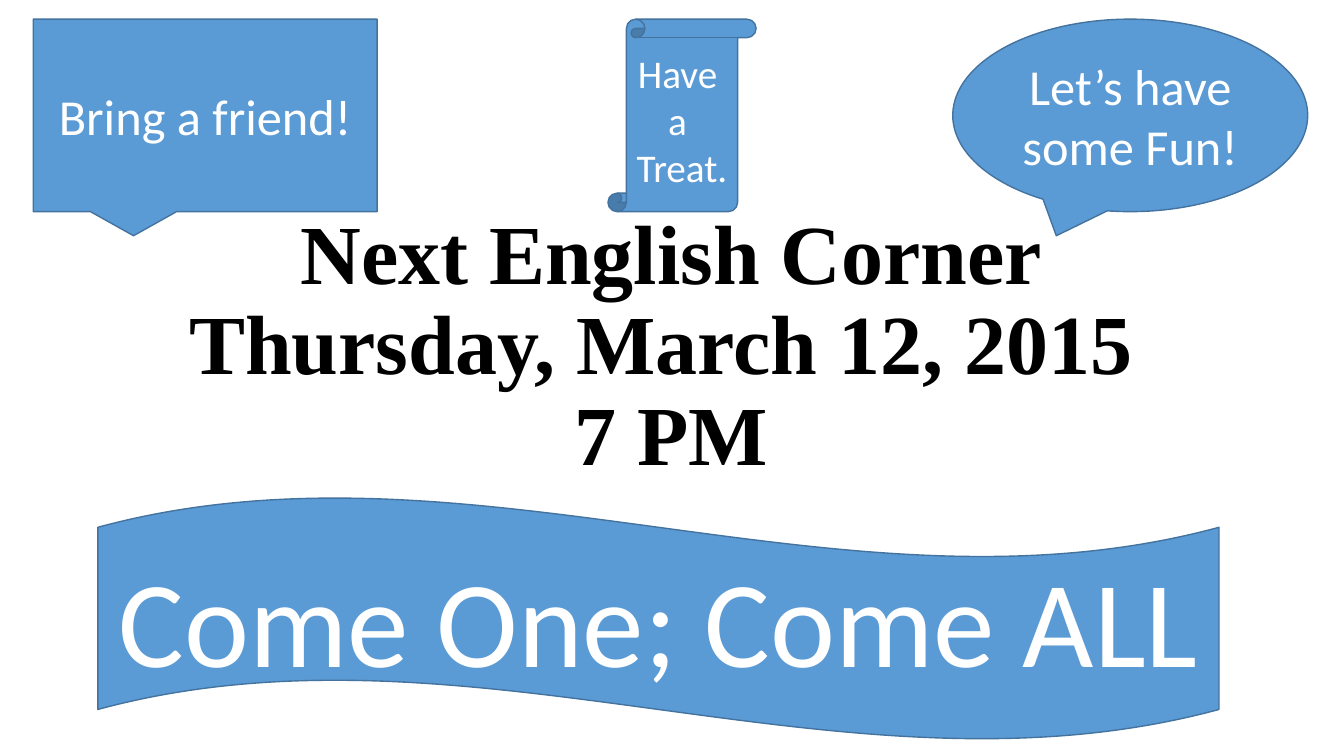
from pptx import Presentation
from pptx.dml.color import RGBColor
from pptx.enum.shapes import MSO_SHAPE
from pptx.enum.text import MSO_ANCHOR, PP_ALIGN
from pptx.util import Inches, Pt

BLUE = RGBColor(0x5B, 0x9B, 0xD5)
DARK_BLUE = RGBColor(0x43, 0x73, 0x9E)
WHITE = RGBColor(0xFF, 0xFF, 0xFF)
BLACK = RGBColor(0x00, 0x00, 0x00)

TITLE = "Next English Corner\vThursday, March 12, 2015 \v7 PM"
TITLE_BOX = (0.91, 2.1, 11.5, 2.7)

TOP, TOP_HEIGHT = 0.19, 1.91
# preset shape, (left, top, width, height), text, size
BANNERS = [
    (MSO_SHAPE.OVAL_CALLOUT, (9.45, TOP, 3.52, TOP_HEIGHT), "Let’s have some Fun!", 36),
    (MSO_SHAPE.RECTANGULAR_CALLOUT, (0.33, TOP, 3.41, TOP_HEIGHT), "Bring a friend!", 36),
    (MSO_SHAPE.WAVE, (0.97, 4.93, 11.12, 2.41), "Come One; Come ALL", 88),
    (MSO_SHAPE.VERTICAL_SCROLL, (6.03, TOP, 1.47, TOP_HEIGHT), "Have \na \nTreat.", 28),
]


def write_centred(shape, text, font_name, size, color, bold=False, line_spacing=None):
    frame = shape.text_frame
    frame.text = text
    frame.word_wrap = True
    frame.vertical_anchor = MSO_ANCHOR.MIDDLE
    for paragraph in frame.paragraphs:
        paragraph.alignment = PP_ALIGN.CENTER
        paragraph.line_spacing = line_spacing
        for run in paragraph.runs:
            run.font.name = font_name
            run.font.size = Pt(size)
            run.font.bold = bold
            run.font.color.rgb = color


presentation = Presentation()
presentation.slide_width = Inches(13.33)
presentation.slide_height = Inches(7.5)
slide = presentation.slides.add_slide(presentation.slide_layouts[6])

title = slide.shapes.add_textbox(*map(Inches, TITLE_BOX))
write_centred(title, TITLE, "Times New Roman", 60, BLACK, bold=True, line_spacing=0.9)

for preset, box, text, size in BANNERS:
    banner = slide.shapes.add_shape(preset, *map(Inches, box))
    banner.shadow.inherit = False
    banner.fill.solid()
    banner.fill.fore_color.rgb = BLUE
    banner.line.color.rgb = DARK_BLUE
    banner.line.width = Pt(1)
    write_centred(banner, text, "Calibri", size, WHITE)

presentation.save("out.pptx")
